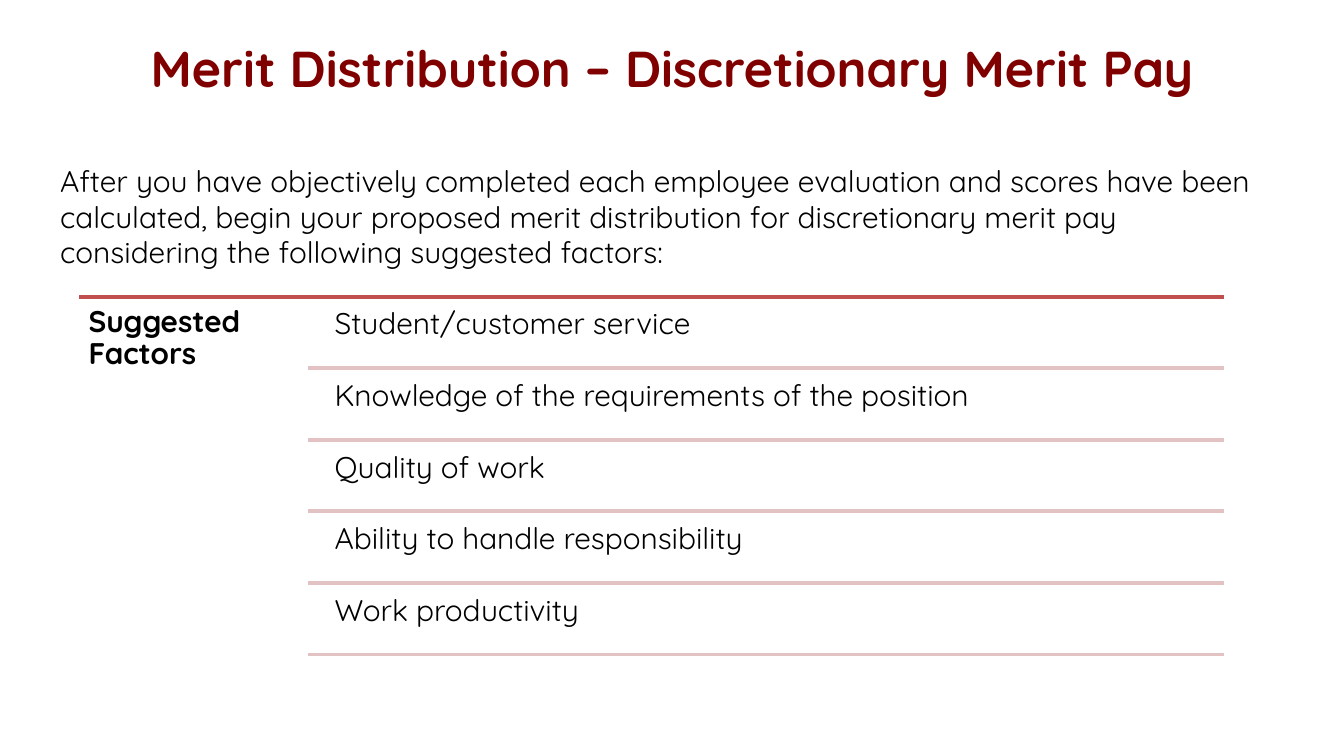
import pptx
import pptx.dml.color
import pptx.enum.shapes
import pptx.enum.text
import pptx.oxml.ns
import pptx.util
from lxml import etree

Inches = pptx.util.Inches
Pt = pptx.util.Pt


def colour(value):
    return pptx.dml.color.RGBColor.from_string(value)


class SlideBuilder:
    font_name = "Quicksand"
    text_colour = "000000"
    title_colour = "800000"
    accent_colour = "C0504D"
    divider_colour = "E2C2C2"
    body_size = 16
    title_size = 27

    def __init__(self, slide):
        self.slide = slide

    def text(self, content, left, top, width, height, size=body_size, bold=False,
             text_colour=text_colour, align=pptx.enum.text.PP_ALIGN.LEFT):
        shape = self.slide.shapes.add_textbox(
            Inches(left), Inches(top), Inches(width), Inches(height))
        frame = shape.text_frame
        frame.word_wrap = True
        frame.text = content
        paragraph = frame.paragraphs[0]
        paragraph.alignment = align
        font = paragraph.runs[0].font
        font.name = self.font_name
        font.size = Pt(size)
        font.bold = bold
        font.color.rgb = colour(text_colour)
        return shape

    def list_text(self, content, left, top, width, height, bold=False):
        frame = self.text(content, left, top, width, height, bold=bold).text_frame
        frame.margin_left = frame.margin_right = Inches(0.07)
        frame.margin_top = frame.margin_bottom = Inches(0.07)
        frame.paragraphs[0].line_spacing = 0.9

    def rule(self, left, right, y, line_colour):
        connector = self.slide.shapes.add_connector(
            pptx.enum.shapes.MSO_CONNECTOR.STRAIGHT,
            Inches(left), Inches(y), Inches(right), Inches(y))
        connector.line.color.rgb = colour(line_colour)
        connector.line.width = Pt(2)
        properties = connector.element.spPr
        etree.SubElement(properties, pptx.oxml.ns.qn("a:effectLst"))


def main():
    presentation = pptx.Presentation()
    presentation.slide_width = Inches(10)
    presentation.slide_height = presentation.slide_width * 9 // 16
    builder = SlideBuilder(presentation.slides.add_slide(presentation.slide_layouts[6]))

    # Title and introduction
    builder.text("Merit Distribution – Discretionary Merit Pay", 0.5, 0.23, 9, 0.94,
                 size=builder.title_size, bold=True, text_colour=builder.title_colour,
                 align=pptx.enum.text.PP_ALIGN.CENTER)
    builder.text("After you have objectively completed each employee evaluation and "
                 "scores have been calculated, begin your proposed merit distribution "
                 "for discretionary merit pay considering the following suggested "
                 "factors:", 0.35, 1.16, 9.3, 1.21)

    # Heading of the factor list
    list_left, list_top, list_right = 0.59, 2.21, 9.11
    builder.rule(list_left, list_right, list_top, builder.accent_colour)
    builder.list_text("Suggested Factors", list_left, list_top, 1.71, 2.69, bold=True)

    # Factors, each closed by a divider
    factors = [
        "Student/customer service",
        "Knowledge of the requirements of the position",
        "Quality of work",
        "Ability to handle responsibility",
        "Work productivity",
    ]
    divider_left, factor_left = 2.29, 2.42
    first_top, last_top, row_height = 2.23, 4.36, 0.51
    row_pitch = (last_top - first_top) / (len(factors) - 1)
    for index, factor in enumerate(factors):
        top = first_top + index * row_pitch
        builder.list_text(factor, factor_left, top, list_right - factor_left, row_height)
        builder.rule(divider_left, list_right, top + row_height, builder.divider_colour)

    presentation.save("out.pptx")


if __name__ == "__main__":
    main()
